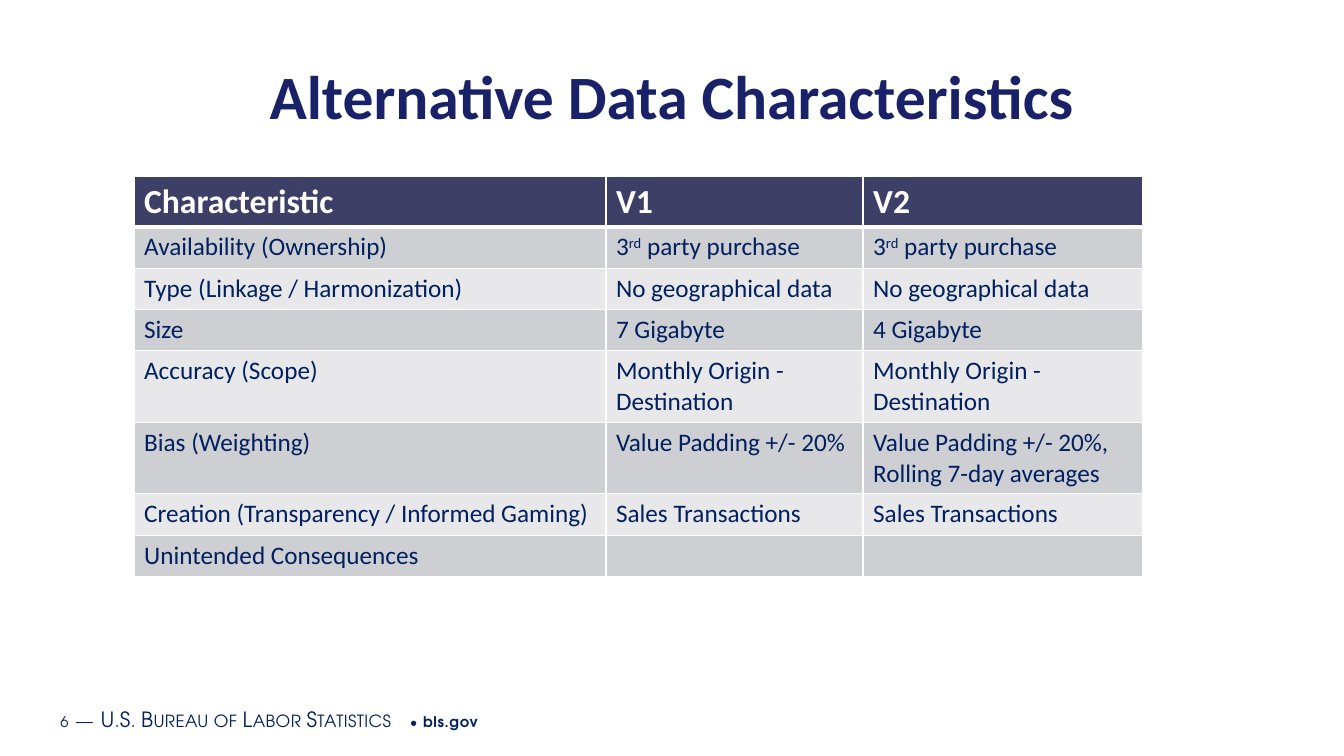
import pptx
import pptx.dml.color
import pptx.enum.text
import pptx.oxml.ns
import pptx.util
from lxml import etree

Inches, Pt = pptx.util.Inches, pptx.util.Pt

# Content
TITLE = "Alternative Data Characteristics"
HEADER = ("Characteristic", "V1", "V2")
PURCHASE = "3^rd^ party purchase"  # carets enclose superscript
BODY = [
    ("Availability (Ownership)", PURCHASE, PURCHASE),
    ("Type (Linkage / Harmonization)", "No geographical data", "No geographical data"),
    ("Size", "7 Gigabyte", "4 Gigabyte"),
    ("Accuracy (Scope)", "Monthly Origin - Destination", "Monthly Origin - Destination"),
    ("Bias (Weighting)", "Value Padding +/- 20%",
     "Value Padding +/- 20%,\nRolling 7-day averages"),
    ("Creation (Transparency / Informed Gaming)", "Sales Transactions", "Sales Transactions"),
    ("Unintended Consequences", "", ""),
]
# Footer runs: text, size, spacing in hundredths of a point, small caps, bold
FOOTER = [
    ("6", 10.5, 50, False, False),
    (" ", 16, 50, False, False),
    ("—", 15, 30, True, False),
    (" ", 16, 50, False, False),
    ("U.S. Bureau of Labor Statistics", 15, 30, True, False),
    (" • ", 10.5, 50, False, False),
    ("bls.gov", 10.5, 50, False, True),
]

# Style
NAVY, TITLE_BLUE, WHITE = "002060", "192168", "FFFFFF"
HEADER_FILL, BAND_FILLS = "3E3F67", ("CECFD3", "E8E8EB")
COLUMN_WIDTHS = (4.68, 2.55, 2.77)
HEADER_HEIGHT, ROW_HEIGHT, TWO_LINE_HEIGHT = 0.5, 0.41, 0.71
TWO_LINE_ROWS = (4, 5)


def rgb(color):
    return pptx.dml.color.RGBColor.from_string(color)


def set_font(font, name, size, color, bold=False):
    font.name, font.size, font.bold = name, Pt(size), bold
    font.color.rgb = rgb(color)


def set_borders(cell, top, bottom):
    properties = cell._tc.get_or_add_tcPr()
    for side, width in (("lnL", 1), ("lnR", 1), ("lnT", top), ("lnB", bottom)):
        line = etree.SubElement(properties, pptx.oxml.ns.qn("a:" + side), w=str(Pt(width)))
        fill = etree.SubElement(line, pptx.oxml.ns.qn("a:solidFill"))
        etree.SubElement(fill, pptx.oxml.ns.qn("a:srgbClr"), val=WHITE)


def write_cell(cell, text, size, color, bold):
    for index, line in enumerate(text.split("\n")):
        frame = cell.text_frame
        paragraph = frame.add_paragraph() if index else frame.paragraphs[0]
        set_font(paragraph.font, "Calibri", size, color, bold)
        for part, words in enumerate(line.split("^")):
            if words:
                run = paragraph.add_run()
                run.text = words
                if part % 2:
                    run._r.get_or_add_rPr().set("baseline", "30000")


def add_title(slide):
    title = slide.shapes.title
    title.left, title.top = Inches(0.54), Inches(0.5)
    title.width, title.height = Inches(12.25), Inches(0.88)
    title.text_frame.text = TITLE
    title.text_frame.auto_size = pptx.enum.text.MSO_AUTO_SIZE.NONE
    title.text_frame.vertical_anchor = pptx.enum.text.MSO_ANCHOR.MIDDLE
    heading = title.text_frame.paragraphs[0]
    heading.alignment = pptx.enum.text.PP_ALIGN.CENTER
    set_font(heading.font, "Calibri", 44, TITLE_BLUE, True)


def add_characteristics(slide):
    rows = [HEADER] + BODY
    heights = [HEADER_HEIGHT] + [
        TWO_LINE_HEIGHT if number in TWO_LINE_ROWS else ROW_HEIGHT
        for number in range(1, len(rows))]
    table = slide.shapes.add_table(
        len(rows), len(HEADER), Inches(1.33), Inches(1.75),
        Inches(sum(COLUMN_WIDTHS)), Inches(sum(heights))).table
    for column, width in zip(table.columns, COLUMN_WIDTHS):
        column.width = Inches(width)
    for number, (texts, height) in enumerate(zip(rows, heights)):
        table.rows[number].height = Inches(height)
        is_header = number == 0
        for column, text in enumerate(texts):
            cell = table.cell(number, column)
            set_borders(cell, 3 if number == 1 else 1, 3 if is_header else 1)
            cell.fill.solid()
            cell.fill.fore_color.rgb = rgb(
                HEADER_FILL if is_header else BAND_FILLS[(number - 1) % 2])
            write_cell(cell, text, 24 if is_header else 18,
                       WHITE if is_header else NAVY, is_header)


def add_footer(slide):
    frame = slide.shapes.add_textbox(
        Inches(0.53), Inches(6.93), Inches(8.47), Inches(0.4)).text_frame
    frame.word_wrap = True
    frame.vertical_anchor = pptx.enum.text.MSO_ANCHOR.MIDDLE
    frame.margin_left = frame.margin_right = Inches(0.07)
    frame.margin_top = frame.margin_bottom = Inches(0.04)
    for text, size, spacing, small_caps, bold in FOOTER:
        run = frame.paragraphs[0].add_run()
        run.text = text
        set_font(run.font, "TeX Gyre Adventor", size, NAVY, bold)
        properties = run._r.get_or_add_rPr()
        properties.set("spc", str(spacing))
        if small_caps:
            properties.set("cap", "small")


def main():
    deck = pptx.Presentation()
    deck.slide_width, deck.slide_height = Inches(13.33), Inches(7.5)
    slide = deck.slides.add_slide(deck.slide_layouts[5])
    add_footer(slide)
    add_title(slide)
    add_characteristics(slide)
    deck.save("out.pptx")


if __name__ == "__main__":
    main()
